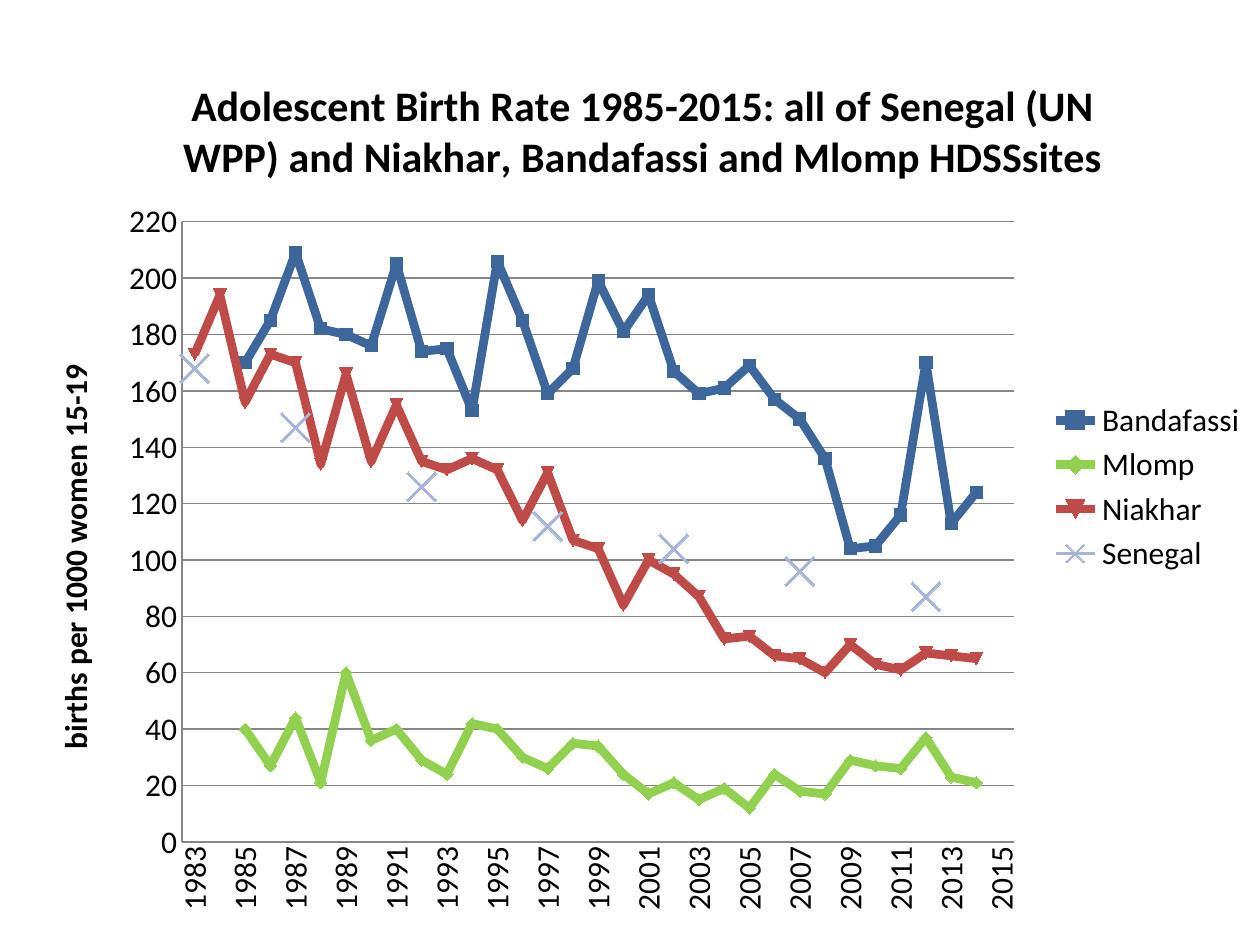
from lxml import etree
from pptx import Presentation
from pptx.chart.data import CategoryChartData
from pptx.dml.color import RGBColor
from pptx.enum.chart import XL_CHART_TYPE as ChartType
from pptx.enum.chart import XL_LEGEND_POSITION as LegendPosition
from pptx.enum.chart import XL_MARKER_STYLE as MarkerStyle
from pptx.enum.chart import XL_TICK_MARK as TickMark
from pptx.oxml import parse_xml
from pptx.oxml.ns import nsdecls, qn
from pptx.util import Cm, Pt

COLORS = {
    "text": "000000",
    "grid": "868686",
    "Bandafassi": "3D679B",
    "Mlomp": "92D050",
    "Niakhar": "BE4B48",
    "Senegal": "A5B4D7",
}
FONT = "Calibri"
YEARS = [str(year) for year in range(1983, 2016)]
SENEGAL = {1983: 168, 1987: 147, 1992: 126, 1997: 112, 2002: 104, 2007: 96, 2012: 87}
RATES = {
    "Bandafassi": [
        None, None, 170, 185, 209, 182, 180, 176, 205, 174, 175, 153, 206, 185, 159, 168, 199,
        181, 194, 167, 159, 161, 169, 157, 150, 136, 104, 105, 116, 170, 113, 124, None],
    "Mlomp": [
        None, None, 40, 27, 44, 21, 60, 36, 40, 29, 24, 42, 40, 30, 26, 35, 34,
        24, 17, 21, 15, 19, 12, 24, 18, 17, 29, 27, 26, 37, 23, 21, None],
    "Niakhar": [
        173, 194, 156, 173, 170, 134, 166, 135, 155, 135, 132, 136, 132, 114, 131, 107, 104,
        84, 100, 95, 87, 72, 73, 66, 65, 60, 70, 63, 61, 67, 66, 65, None],
    "Senegal": [SENEGAL.get(int(year)) for year in YEARS],
}


def color(name):
    return RGBColor.from_string(COLORS[name])


def format_font(font, size=18, bold=False):
    font.name, font.size, font.bold = FONT, Pt(size), bold
    font.color.rgb = color("text")


def write_text(text_frame, text, **font_format):
    paragraph = text_frame.paragraphs[0]
    run = paragraph.add_run()
    run.text = text
    format_font(run.font, **font_format)


def place_plot(chart, x, y, w, h):
    plot_area = chart._chartSpace.chart.plotArea
    for old_layout in plot_area.findall(qn("c:layout")):
        plot_area.remove(old_layout)
    values = "".join(f'<c:{tag} val="{value}"/>' for tag, value in zip("xywh", (x, y, w, h)))
    plot_area.insert(0, parse_xml(
        f'<c:layout {nsdecls("c")}><c:manualLayout><c:layoutTarget val="inner"/>'
        f'<c:xMode val="edge"/><c:yMode val="edge"/>{values}</c:manualLayout></c:layout>'))


def format_axes(chart):
    years, rates = chart.category_axis, chart.value_axis
    for axis in (years, rates):
        axis.major_tick_mark = axis.minor_tick_mark = TickMark.NONE
        axis.format.line.color.rgb = color("grid")
        format_font(axis.tick_labels.font)
    years._element.find(qn("c:txPr")).find(qn("a:bodyPr")).set("rot", "-5400000")
    label_skip = etree.Element(qn("c:tickLblSkip"), val="2")
    years._element.find(qn("c:noMultiLvlLbl")).addprevious(label_skip)
    rates.minimum_scale, rates.maximum_scale, rates.major_unit = 0, 220, 20
    rates.major_gridlines.format.line.color.rgb = color("grid")
    title_frame = rates.axis_title.text_frame
    write_text(title_frame, "births per 1000 women 15-19", bold=True)
    title_frame._txBody.find(qn("a:bodyPr")).set("rot", "-5400000")


def format_series(series):
    is_national = series.name == "Senegal"
    series.smooth = False
    series.format.line.color.rgb = color(series.name)
    series.format.line.width = Pt(2 if is_national else 5)
    marker = series.marker
    marker.size = 17 if is_national else 7
    if is_national:
        marker.style = MarkerStyle.X
    marker.format.fill.solid()
    marker.format.fill.fore_color.rgb = color(series.name)
    marker.format.line.color.rgb = color(series.name)


def add_birth_rate_chart(slide, left, top, width, height):
    data = CategoryChartData()
    data.categories = YEARS
    for site, rates in RATES.items():
        data.add_series(site, rates)
    chart = slide.shapes.add_chart(
        ChartType.LINE_MARKERS, left, top, width, height, data).chart
    format_font(chart.font, size=10)
    chart.has_title = True
    write_text(
        chart.chart_title.text_frame,
        "Adolescent Birth Rate 1985-2015: all of Senegal (UN WPP) "
        "and Niakhar, Bandafassi and Mlomp HDSSsites",
        size=24, bold=True)
    chart.chart_title.include_in_layout = False
    chart.has_legend = True
    chart.legend.position = LegendPosition.RIGHT
    chart.legend.include_in_layout = False
    format_font(chart.legend.font)
    format_axes(chart)
    place_plot(chart, x=0.127, y=0.2, w=0.674, h=0.702)
    chart.plots[0].vary_by_categories = False
    for series in chart.plots[0].series:
        format_series(series)


def main():
    presentation = Presentation()
    presentation.slide_width, presentation.slide_height = Cm(25.4), Cm(19.05)
    slide = presentation.slides.add_slide(presentation.slide_layouts[6])
    add_birth_rate_chart(slide, Cm(0.51), Cm(0.91), Cm(24.89), Cm(17.81))
    presentation.save("out.pptx")


if __name__ == "__main__":
    main()
